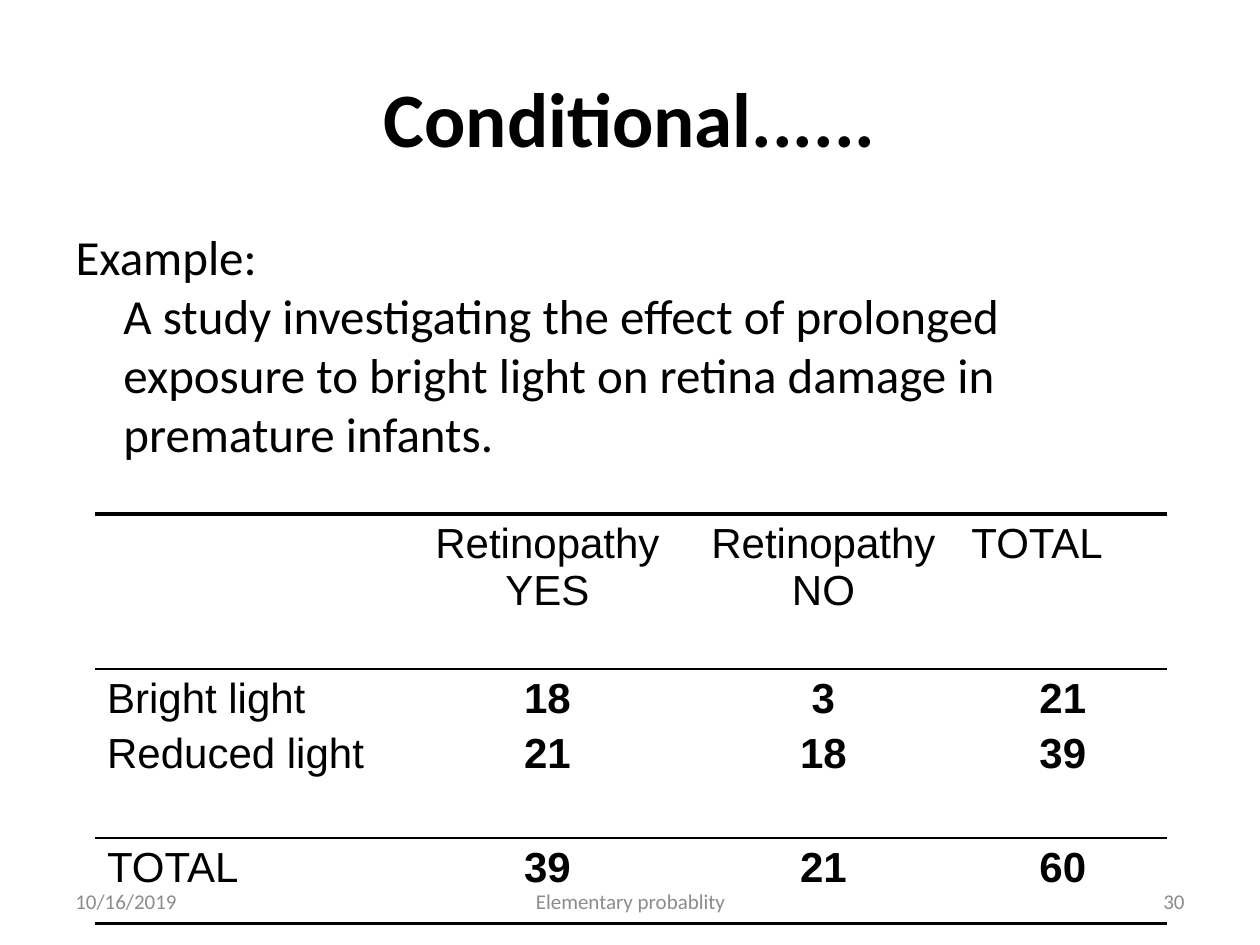
from pptx import Presentation, util as u
from pptx.dml.color import RGBColor
from pptx.enum import text
from pptx.oxml import parse_xml
from pptx.oxml.ns import nsdecls

LEFT, MID, RIGHT = text.PP_ALIGN.LEFT, text.PP_ALIGN.CENTER, text.PP_ALIGN.RIGHT
WIDE, HIGH = 10, 7.5
BLACK, GREY = "000000", "8C8C8C"


def tint(code):
    return RGBColor.from_string(code)


def write(frame, words, size=24, font="Arial", color=BLACK, bold=False,
          align=LEFT, gap=0):
    """Fill a frame with one paragraph per line of words; \\v breaks a line."""
    frame.word_wrap = True
    frame.text = words
    for i, para in enumerate(frame.paragraphs):
        para.alignment = align
        para.space_before = u.Pt(gap if i else 0)
        for run in para.runs:
            face = run.font
            face.size, face.name, face.bold = u.Pt(size), font, bold
            face.color.rgb = tint(color)


def edge(cell, side, width):
    """Draw one border of a cell; a width of 0 hides it."""
    paint = (f'<a:solidFill><a:srgbClr val="{BLACK}"/></a:solidFill>'
             if width else "<a:noFill/>")
    return parse_xml(f'<a:ln{side} {nsdecls("a")} w="{u.Pt(width)}">{paint}</a:ln{side}>')


class Page:
    """One slide; places are shares of its width and height."""
    font = "Calibri"

    def __init__(self, deck):
        self.slide = deck.slides.add_slide(deck.slide_layouts[1])

    def box(self, x, y, w, h):
        return [u.Inches(n) for n in (x * WIDE, y * HIGH, w * WIDE, h * HIGH)]

    def move(self, item, place):
        item.left, item.top, item.width, item.height = self.box(*place)

    def title(self, words, place):
        item = self.slide.shapes.title
        self.move(item, place)
        item.text_frame.vertical_anchor = text.MSO_ANCHOR.MIDDLE
        write(item.text_frame, words, size=44, font=self.font, bold=True, align=MID)

    def body(self, words, place, hang):
        item = self.slide.placeholders[1]
        self.move(item, place)
        frame = item.text_frame
        write(frame, words, size=28, font=self.font)
        frame.auto_size = text.MSO_AUTO_SIZE.NONE
        for para in frame.paragraphs:
            props = para._p.get_or_add_pPr()
            props.set("marL", str(u.Inches(hang)))
            props.set("indent", str(-u.Inches(hang)))
            props.append(parse_xml(f'<a:buNone {nsdecls("a")}/>'))

    def table(self, data, place, cols, rows, rules):
        """Rules are the widths of the lines above, between and below rows."""
        grid = self.slide.shapes.add_table(len(rows), len(cols), *self.box(*place)).table
        grid.first_row = grid.horz_banding = False
        for col, w in zip(grid.columns, cols):
            col.width = u.Inches(w)
        for r, (row, h) in enumerate(zip(grid.rows, rows)):
            row.height = u.Inches(h)
            for c, cell in enumerate(row.cells):
                head = r == 0
                side = c == 0 or (head and c == len(cols) - 1)
                write(cell.text_frame, data[r][c], bold=not head and c > 0,
                      align=LEFT if side else MID, gap=4.8)
                cell.fill.background()
                sides = zip("LRTB", (0, 0, rules[r], rules[r + 1]))
                for i, (name, width) in enumerate(sides):
                    cell._tc.get_or_add_tcPr().insert(i, edge(cell, name, width))

    def foot(self, words, x, w, align):
        item = self.slide.shapes.add_textbox(*self.box(x, 6.95 / HIGH, w, 0.4 / HIGH))
        item.text_frame.vertical_anchor = text.MSO_ANCHOR.MIDDLE
        write(item.text_frame, words, size=12, font=self.font, color=GREY, align=align)


def main():
    deck = Presentation()
    deck.slide_width, deck.slide_height = u.Inches(WIDE), u.Inches(HIGH)
    page = Page(deck)
    page.title("Conditional......", (0.05, 0.04, 0.9, 1.25 / HIGH))
    page.body("Example:\vA study investigating the effect of prolonged exposure to "
              "bright light on retina damage in premature infants.",
              (0.05, 1.75 / HIGH, 0.9, 0.66), hang=0.38)
    page.table([["", "Retinopathy YES", "Retinopathy NO", "TOTAL"],
                ["Bright light\nReduced light", "18\n21", "3\n18", "21\n39"],
                ["TOTAL", "39", "21", "60"]],
               (0.075, 4.08 / HIGH, 0.85, 3.25 / HIGH),
               cols=(2.48, 2.23, 2.15, 1.65), rows=(1.23, 1.34, 0.68),
               rules=(2.25, 1, 1, 2.25))
    page.foot("30", 0.717, 0.233, RIGHT)
    page.foot("10/16/2019", 0.05, 0.233, LEFT)
    page.foot("Elementary probablity", 0.342, 0.317, MID)
    deck.save("out.pptx")


if __name__ == "__main__":
    main()
